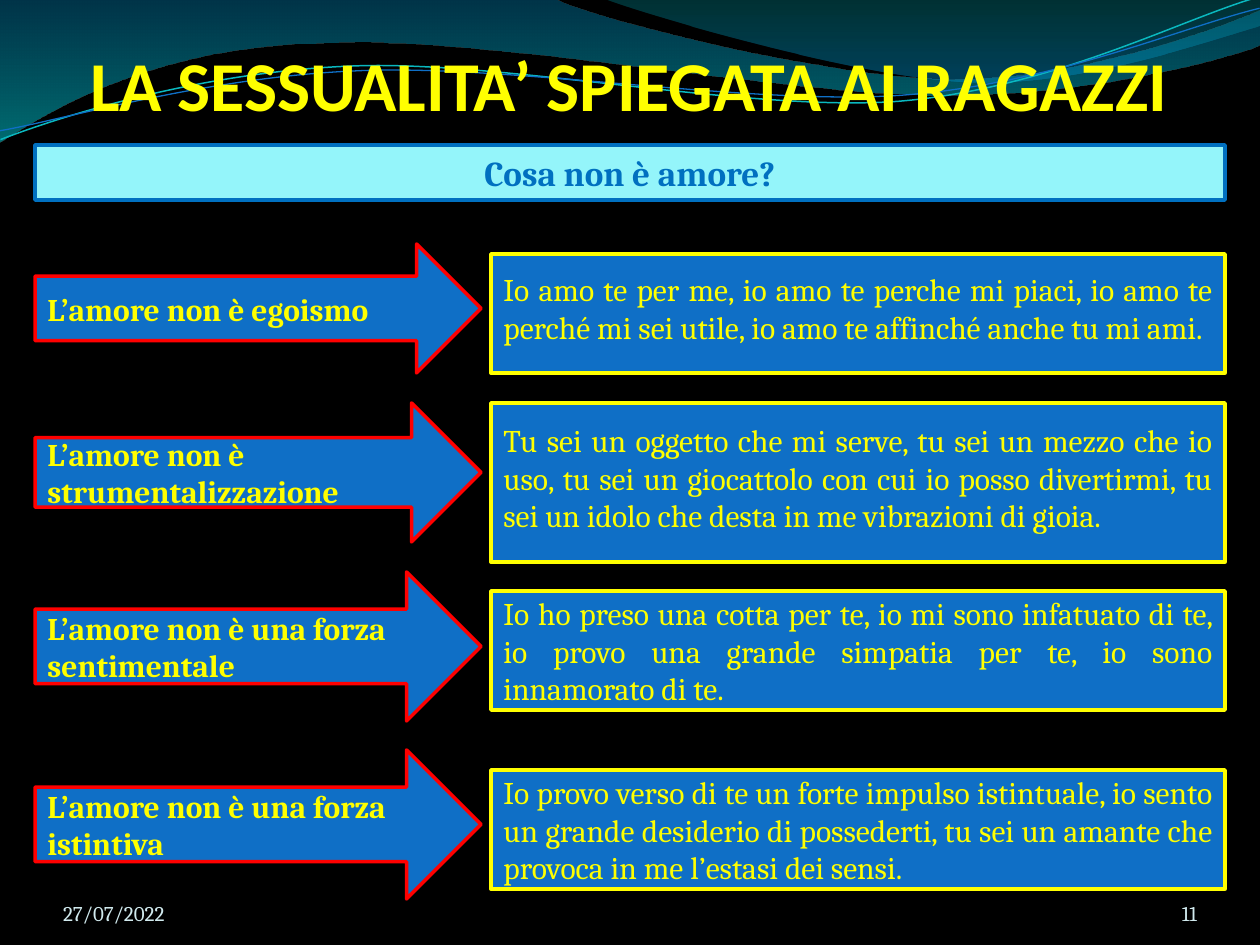
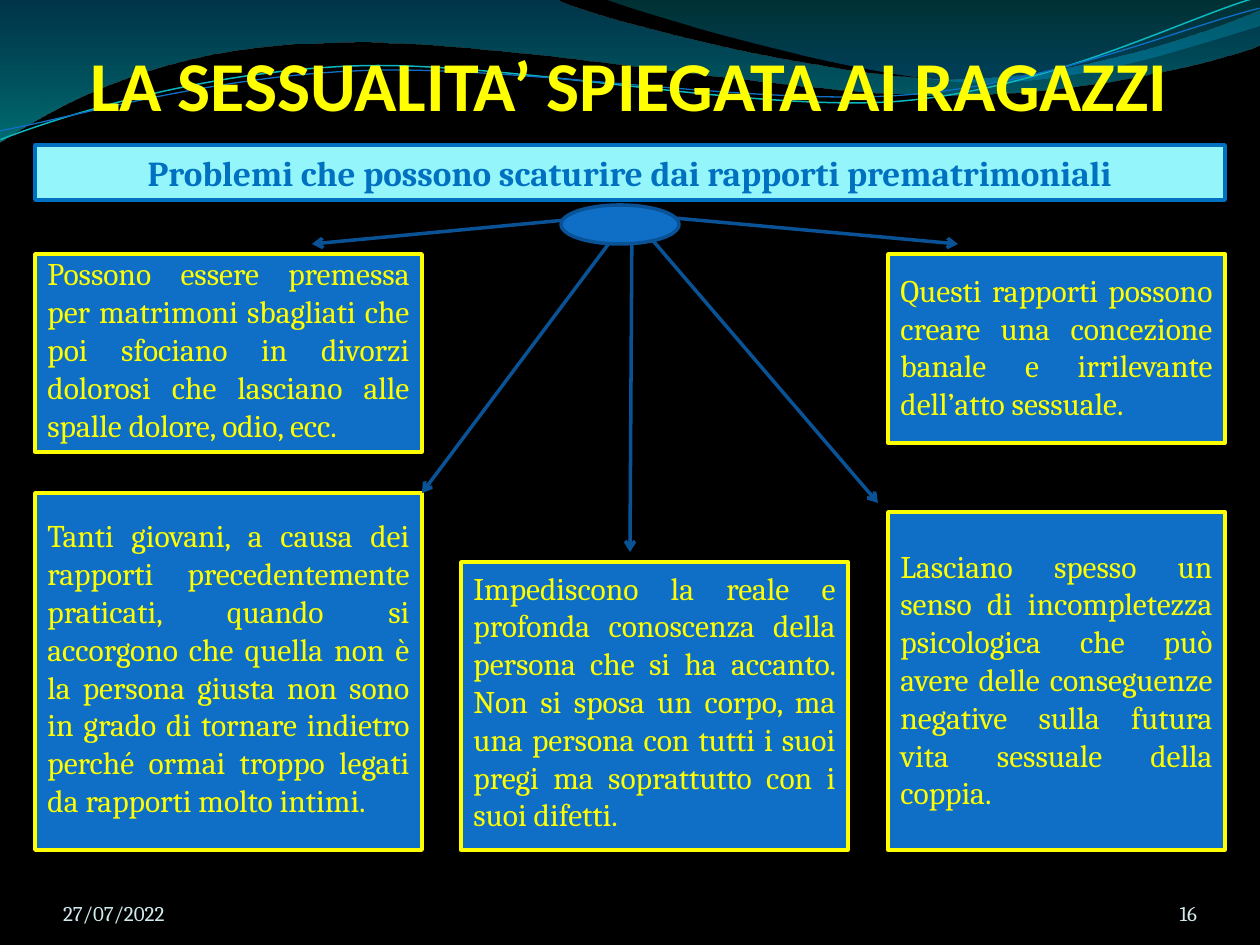
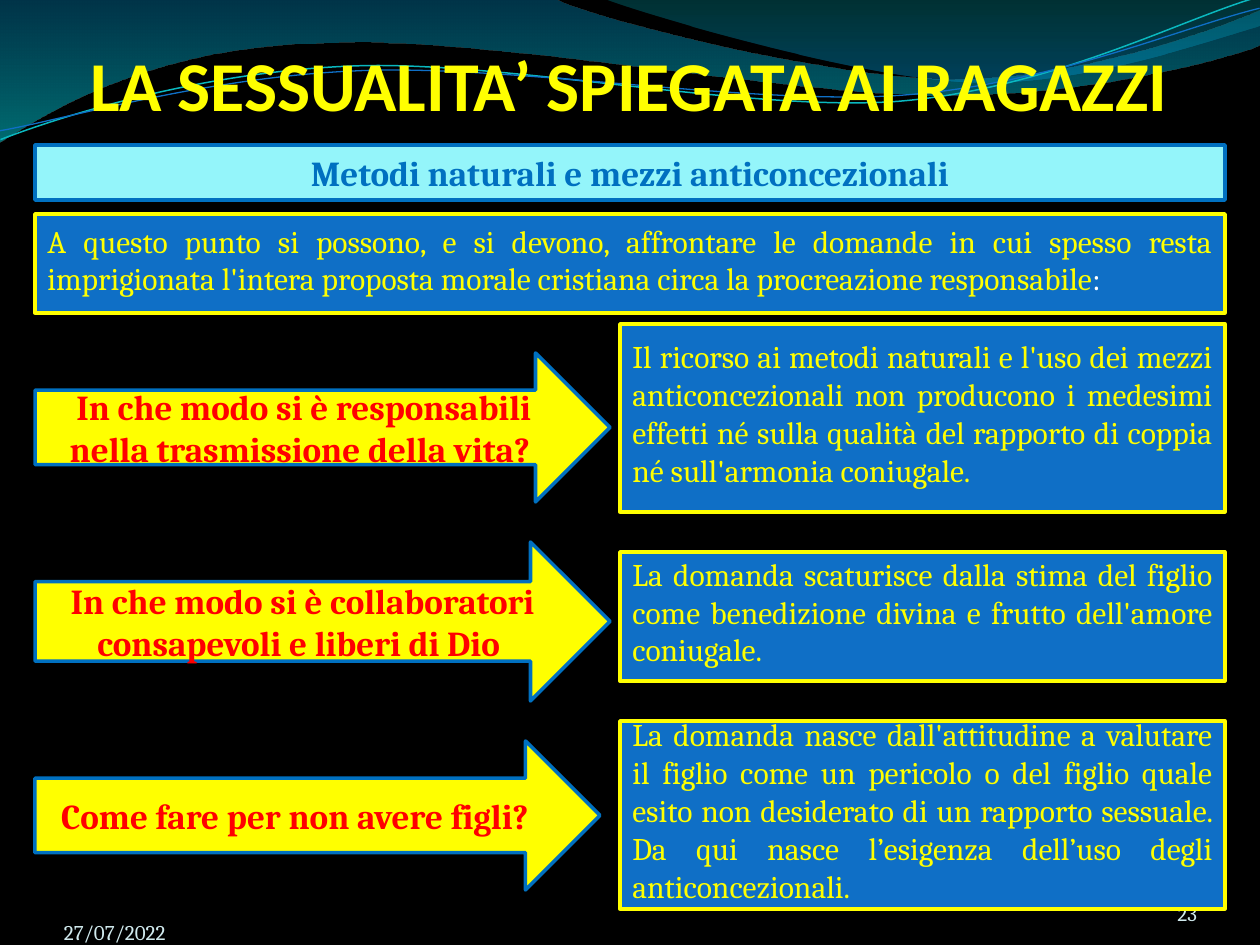
from dataclasses import dataclass

from lxml import etree
from pptx import Presentation
from pptx.dml.color import RGBColor
from pptx.enum.shapes import MSO_CONNECTOR, MSO_SHAPE
from pptx.enum.text import MSO_ANCHOR, PP_ALIGN
from pptx.oxml.ns import qn
from pptx.util import Pt

PX = 914400 / 126  # EMU in one pixel
RECTANGLE, ARROW, OVAL = MSO_SHAPE.RECTANGLE, MSO_SHAPE.RIGHT_ARROW, MSO_SHAPE.OVAL
STRAIGHT = MSO_CONNECTOR.STRAIGHT
LEFT, CENTER, RIGHT, JUSTIFY = PP_ALIGN.LEFT, PP_ALIGN.CENTER, PP_ALIGN.RIGHT, PP_ALIGN.JUSTIFY
MIDDLE, BOTTOM = MSO_ANCHOR.MIDDLE, MSO_ANCHOR.BOTTOM


class Theme:
    black, white, yellow, red = "000000", "FFFFFF", "FFFF00", "FF0000"
    blue, edge_blue, banner_blue, banner_fill = "0F6FC6", "095295", "0070C0", "94F5FA"
    footer, cyan = "D1EAEE", "0AB8BF"
    title_font, body_font = "Calibri", "Cambria"
    title_size, heading_size, body_size, footer_size = 40, 20, 18, 12
    outline = 2


@dataclass
class Style:
    color: str
    size: int
    bold: bool = False
    align: PP_ALIGN = LEFT
    anchor: MSO_ANCHOR = MIDDLE
    font: str = Theme.body_font
    fill: str = ""
    line: str = ""


TITLE = Style(Theme.yellow, Theme.title_size, True, CENTER, BOTTOM, Theme.title_font)
DATE = Style(Theme.footer, Theme.footer_size, anchor=BOTTOM)
NUMBER = Style(Theme.footer, Theme.footer_size, align=RIGHT, anchor=BOTTOM)
BANNER = Style(Theme.banner_blue, Theme.heading_size, True, CENTER,
               fill=Theme.banner_fill, line=Theme.banner_blue)
PANEL = Style(Theme.yellow, Theme.body_size, align=JUSTIFY, fill=Theme.blue, line=Theme.yellow)
CLAIM = Style(Theme.yellow, Theme.body_size, True, fill=Theme.blue, line=Theme.red)
QUESTION = Style(Theme.red, Theme.heading_size, True, CENTER,
                 fill=Theme.yellow, line=Theme.banner_blue)
HUB = Style(Theme.white, Theme.body_size, fill=Theme.blue, line=Theme.edge_blue)

# Header waves: a start point, then straight (2 numbers) or curved (6 numbers) steps
WAVES = [
    ((0, 0), [(554, -1), (600, 21, 837, 79, 955, 79), (1075, 79, 1207, 33, 1260, 11),
              (1261, 45), (1239, 55, 1096, 96, 940, 95), (784, 95, 481, 35, 324, 43),
              (163, 45, 58, 105, -1, 142)],
     [(0, "0074A1", 45), (1, "00C6CF", 55)]),
    ((604, -1), [(641, 14, 859, 78, 969, 82), (1079, 87, 1211, 40, 1260, 26), (1260, 0)],
     [(0, "00A1A9", 30), (0.8, "008BBF", 45)]),
]
STRAND_ANGLE = -2.7
STRANDS = [
    ((-2, 110), [(58, 90, 199, 52, 350, 53), (499, 53, 745, 118, 896, 114),
                 (1049, 109, 1184, 45, 1260, 27)], Theme.cyan, 0.85),
    ((-2, 101), [(57, 94, 207, 57, 357, 58), (509, 58, 750, 112, 902, 108),
                 (1052, 104, 1188, 52, 1262, 38)], Theme.blue, 0.75),
]


def add_box(page, kind, frame, text, style, tail="", lift=0):
    """Add a shape, or a text box when kind is None; tail is a white last run."""
    edges = [round(value * PX) for value in frame]
    if kind is None:
        box = page.shapes.add_textbox(*edges)
        area = box.text_frame
        area.margin_left = area.margin_top = area.margin_right = area.margin_bottom = 0
    else:
        box = page.shapes.add_shape(kind, *edges)
        box.shadow.inherit = False
        box.fill.solid()
        box.fill.fore_color.rgb = RGBColor.from_string(style.fill)
        box.line.color.rgb = RGBColor.from_string(style.line)
        box.line.width = Pt(Theme.outline)
        area = box.text_frame
        area.margin_top, area.margin_bottom = round((6 - lift) * PX), round((6 + lift) * PX)
    area.word_wrap = True
    area.vertical_anchor = style.anchor
    para = area.paragraphs[0]
    para.alignment = style.align
    for words, color in ((text, style.color), (tail, Theme.white)):
        if words:
            span = para.add_run()
            span.text = words
            span.font.name = style.font
            span.font.size = Pt(style.size)
            span.font.bold = style.bold
            span.font.color.rgb = RGBColor.from_string(color)
    return box


def add_curve(page, start, steps, closed):
    """Add a freeform through all points, then turn each run of three into a cubic curve."""
    points = [(round(x * PX), round(y * PX)) for step in [start, *steps]
              for x, y in zip(step[::2], step[1::2])]
    builder = page.shapes.build_freeform(*points[0], scale=1.0)
    builder.add_line_segments(points[1:], close=closed)
    curve = builder.convert_to_shape()
    curve.shadow.inherit = False
    segments = iter(list(curve._element.iter(qn("a:lnTo"))))
    for step in steps:
        segment = next(segments)
        if len(step) == 6:
            segment.tag = qn("a:cubicBezTo")
            for _ in range(2):
                extra = next(segments)
                segment.append(extra[0])
                extra.getparent().remove(extra)
    return curve


deck = Presentation()
deck.slide_width, deck.slide_height = round(1260 * PX), round(945 * PX)

# Shared background, waves, title, footers and banner
pages = []
for heading, number, date_left, date_top in (
    ("Cosa non è amore?", "11", 63, 876),
    ("Problemi che possono scaturire dai rapporti prematrimoniali", "16", 63, 876),
    ("Metodi naturali e mezzi anticoncezionali", "23", 64, 895),
):
    page = deck.slides.add_slide(deck.slide_layouts[6])
    pages.append(page)
    page.background.fill.solid()
    page.background.fill.fore_color.rgb = RGBColor.from_string(Theme.black)
    for start, steps, stops in WAVES:
        wave = add_curve(page, start, steps, True)
        wave.line.fill.background()
        wave.fill.gradient()
        wave.fill.gradient_angle = 270
        for stop, (position, color, _) in zip(wave.fill.gradient_stops, stops):
            stop.position = position
            stop.color.rgb = RGBColor.from_string(color)
        for color_node, (_, _, opacity) in zip(wave._element.iter(qn("a:srgbClr")), stops):
            etree.SubElement(color_node, qn("a:alpha")).set("val", str(opacity * 1000))
    for start, steps, color, width in STRANDS:
        strand = add_curve(page, start, steps, False)
        strand.rotation = STRAND_ANGLE
        strand.fill.background()
        strand.line.color.rgb = RGBColor.from_string(color)
        strand.line.width = Pt(width)
    title = add_box(page, None, (35, 37, 1191, 89), "LA SESSUALITA’ SPIEGATA AI RAGAZZI", TITLE)
    title.text_frame.margin_right = round(3 * PX)
    add_box(page, None, (date_left, date_top, 294, 50), "27/07/2022", DATE)
    add_box(page, None, (1092, 876, 105, 50), number, NUMBER)
    add_box(page, RECTANGLE, (35, 145, 1190, 55), heading, BANNER)

love_page, problems_page, methods_page = pages

# Slide 1: what love is not
for arrow_top, arrow_height, claim, panel_top, panel_height, lift, words in (
    (244, 129, "L’amore non è egoismo", 254, 119, 6,
     "Io amo te per me, io amo te perche mi piaci, io amo te perché mi sei utile, "
     "io amo te affinché anche tu mi ami."),
    (403, 139, "L’amore non è strumentalizzazione", 403, 159, 5,
     "Tu sei un oggetto che mi serve, tu sei un mezzo che io uso, tu sei un giocattolo "
     "con cui io posso divertirmi, tu sei un idolo che desta in me vibrazioni di gioia."),
    (572, 149, "L’amore non è una forza sentimentale", 591, 119, 0,
     "Io ho preso una cotta per te, io mi sono infatuato di te, io provo una grande "
     "simpatia per te, io sono innamorato di te."),
    (750, 149, "L’amore non è una forza istintiva", 770, 119, 0,
     "Io provo verso di te un forte impulso istintuale, io sento un grande desiderio di "
     "possederti, tu sei un amante che provoca in me l’estasi dei sensi."),
):
    add_box(love_page, ARROW, (35, arrow_top, 446, arrow_height), claim, CLAIM)
    add_box(love_page, RECTANGLE, (491, panel_top, 734, panel_height), words, PANEL, lift=lift)

# Slide 2: problems fanning out from a hub
for frame, lift, words, ray_ends in (
    ((35, 254, 387, 198), 4,
     "Possono essere premessa per matrimoni sbagliati che poi sfociano in divorzi dolorosi "
     "che lasciano alle spalle dolore, odio, ecc. ", (630, 214, 312, 244)),
    ((35, 493, 387, 357), 4,
     "Tanti giovani, a causa dei rapporti precedentemente praticati, quando si accorgono che "
     "quella non è la persona giusta non sono in grado di tornare indietro perché ormai "
     "troppo legati da rapporti molto intimi.", (631, 214, 422, 493)),
    ((461, 562, 387, 288), 5,
     "Impediscono la reale e profonda conoscenza della persona che si ha accanto. Non si "
     "sposa un corpo, ma una persona con tutti i suoi pregi ma soprattutto con i suoi "
     "difetti. ", (632, 214, 630, 552)),
    ((888, 512, 337, 338), 2,
     "Lasciano spesso un senso di incompletezza psicologica che può avere delle conseguenze "
     "negative sulla futura vita sessuale della coppia.", (630, 214, 878, 503)),
    ((888, 254, 337, 189), 2,
     "Questi rapporti possono creare una concezione banale e irrilevante dell’atto sessuale.",
     (630, 214, 958, 244)),
):
    add_box(problems_page, RECTANGLE, frame, words, PANEL, lift=lift)
    ray = problems_page.shapes.add_connector(STRAIGHT, *[round(value * PX) for value in ray_ends])
    ray.line.color.rgb = RGBColor.from_string(Theme.edge_blue)
    ray.line.width = Pt(Theme.outline)
    outline = ray._element.spPr.find(qn("a:ln"))
    etree.SubElement(outline, qn("a:tailEnd")).set("type", "arrow")
    etree.SubElement(ray._element.spPr, qn("a:effectLst"))
add_box(problems_page, OVAL, (561, 205, 118, 39), "", HUB)

# Slide 3: questions and answers on methods
add_box(methods_page, RECTANGLE, (35, 214, 1190, 99),
        "A questo punto si possono, e si devono, affrontare le domande in cui spesso resta "
        "imprigionata l'intera proposta morale cristiana circa la procreazione responsabile",
        PANEL, tail=": ", lift=4)
for arrow_frame, question, panel_top, panel_height, answer in (
    ((35, 353, 575, 149), "In che modo si è responsabili nella trasmissione della vita? ",
     324, 188,
     "Il ricorso ai metodi naturali e l'uso dei mezzi anticoncezionali non producono i "
     "medesimi effetti né sulla qualità del rapporto di coppia né sull'armonia coniugale. "),
    ((35, 542, 575, 159), "In che modo si è collaboratori consapevoli e liberi di Dio ",
     552, 129,
     "La domanda scaturisce dalla stima del figlio come benedizione divina e frutto "
     "dell'amore coniugale."),
    ((35, 741, 565, 149), "Come fare per non avere figli? ", 721, 188,
     "La domanda nasce dall'attitudine a valutare il figlio come un pericolo o del figlio "
     "quale esito non desiderato di un rapporto sessuale. Da qui nasce l’esigenza dell’uso "
     "degli anticoncezionali."),
):
    add_box(methods_page, ARROW, arrow_frame, question, QUESTION)
    add_box(methods_page, RECTANGLE, (620, panel_top, 605, panel_height), answer, PANEL, lift=5)

deck.save("out.pptx")
